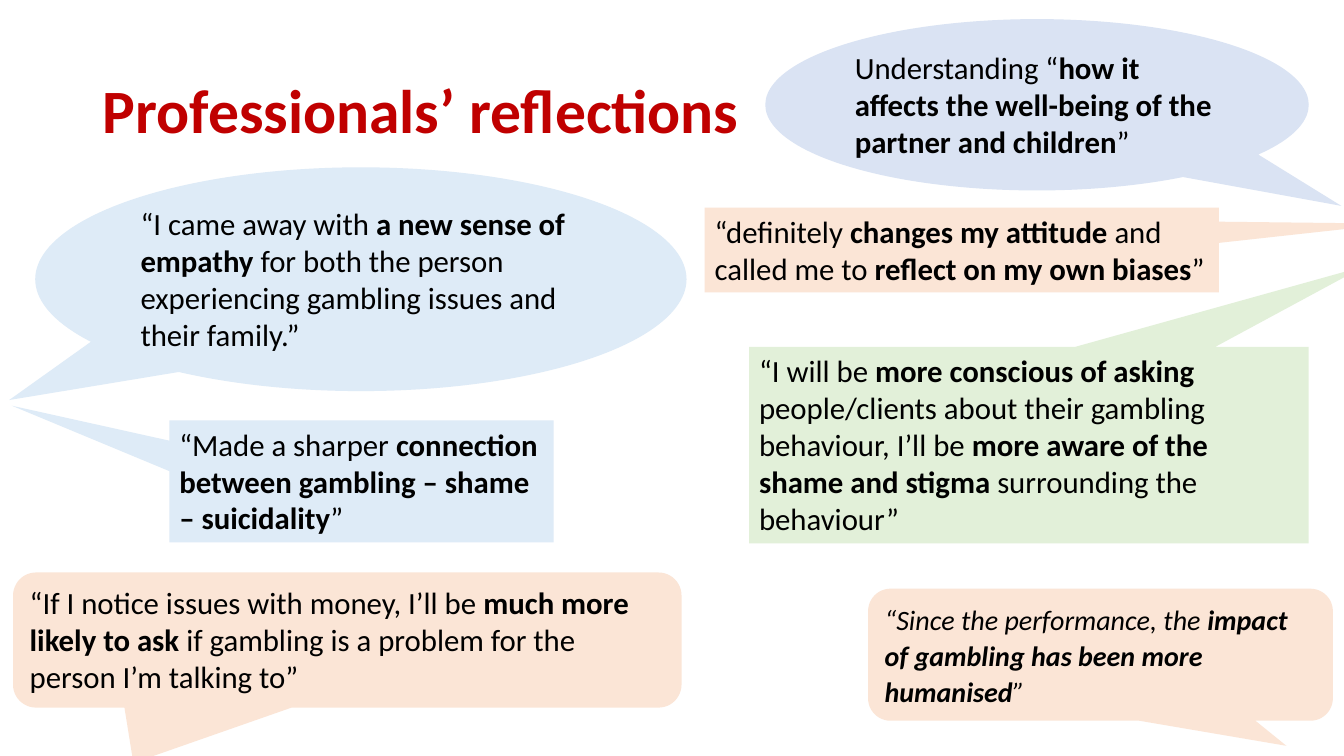
from pptx import Presentation
from pptx import util as u
from pptx.dml.color import RGBColor
from pptx.enum import shapes, text

ELLIPSE = shapes.MSO_SHAPE.OVAL_CALLOUT
RECTANGLE = shapes.MSO_SHAPE.RECTANGULAR_CALLOUT
ROUNDED = shapes.MSO_SHAPE.ROUNDED_RECTANGULAR_CALLOUT
PEACH, SKY, LAVENDER, MINT = "FBE5D6", "DEEBF7", "DAE3F3", "E2F0D9"

REFLECTIONS = [
    (ROUNDED, (8.61, 5.84, 4.61, 1.31), (0.4, 0.69, 0.17), PEACH,
     "“Since the performance, the **impact of gambling has been more humanised**”",
     dict(size=20, italic=True, spacing=1.07)),
    (ELLIPSE, (0.35, 1.66, 6.46, 2.22), (-0.54, 0.54), SKY,
     "“I came away with **a new sense of empathy **for both the person "
     "experiencing gambling issues and their family.”", {}),
    (ELLIPSE, (7.59, 0.19, 5.39, 1.7), (0.56, 0.59), LAVENDER,
     "Understanding “**how it affects the well-being of the partner and children**”", {}),
    (RECTANGLE, (6.99, 2.06, 5.1, 0.84), (0.84, -0.31), PEACH,
     "“definitely **changes my attitude** and called me to "
     "**reflect on my own biases**”", {}),
    (RECTANGLE, (1.68, 4.17, 3.81, 1.21), (-0.91, -0.62), SKY,
     "“Made a sharper **connection between gambling – shame – suicidality**”", {}),
    (ROUNDED, (0.13, 5.68, 6.63, 1.34), (-0.32, 0.91, 0.17), PEACH,
     "“If I notice issues with money, I’ll be **much more likely to ask **"
     "if gambling is a problem for the person I’m talking to”", {}),
    (RECTANGLE, (7.43, 3.44, 5.55, 1.95), (0.6, -0.91), MINT,
     "“I will be **more conscious of asking **people/clients about their gambling "
     "behaviour, I’ll be **more aware of the shame and stigma **"
     "surrounding the behaviour”", {}),
]


def color(value):
    return RGBColor.from_string(value)


def write(frame, words, size=22, hue="000000", italic=False, spacing=1.0,
          anchor=text.MSO_ANCHOR.TOP):
    frame.word_wrap = True
    frame.vertical_anchor = anchor
    paragraph = frame.paragraphs[0]
    paragraph.alignment = text.PP_ALIGN.LEFT
    paragraph.line_spacing = spacing
    for index, part in enumerate(words.split("**")):
        if part:
            run = paragraph.add_run()
            run.text = part
            run.font.name = "Calibri"
            run.font.size = u.Pt(size)
            run.font.bold = index % 2 == 1
            run.font.italic = italic
            run.font.color.rgb = color(hue)


def add_heading(slide, box):
    heading = slide.shapes.add_textbox(*map(u.Inches, box))
    write(heading.text_frame, "**Professionals’ reflections**", size=44, hue="C00000",
          spacing=0.9, anchor=text.MSO_ANCHOR.MIDDLE)


def add_reflection(slide, outline, box, tail, fill, quote, style):
    bubble = slide.shapes.add_shape(outline, *map(u.Inches, box))
    for index, value in enumerate(tail):
        bubble.adjustments[index] = value
    bubble.shadow.inherit = False
    bubble.fill.solid()
    bubble.fill.fore_color.rgb = color(fill)
    bubble.line.fill.background()
    write(bubble.text_frame, quote, **style)
    bubble.text_frame.auto_size = text.MSO_AUTO_SIZE.SHAPE_TO_FIT_TEXT


def main():
    deck = Presentation()
    deck.slide_width, deck.slide_height = u.Inches(13.33), u.Inches(7.5)
    slide = deck.slides.add_slide(deck.slide_layouts[6])
    add_heading(slide, (0.92, 0.4, 11.5, 1.45))
    for reflection in REFLECTIONS:
        add_reflection(slide, *reflection)
    deck.save("out.pptx")


if __name__ == "__main__":
    main()
